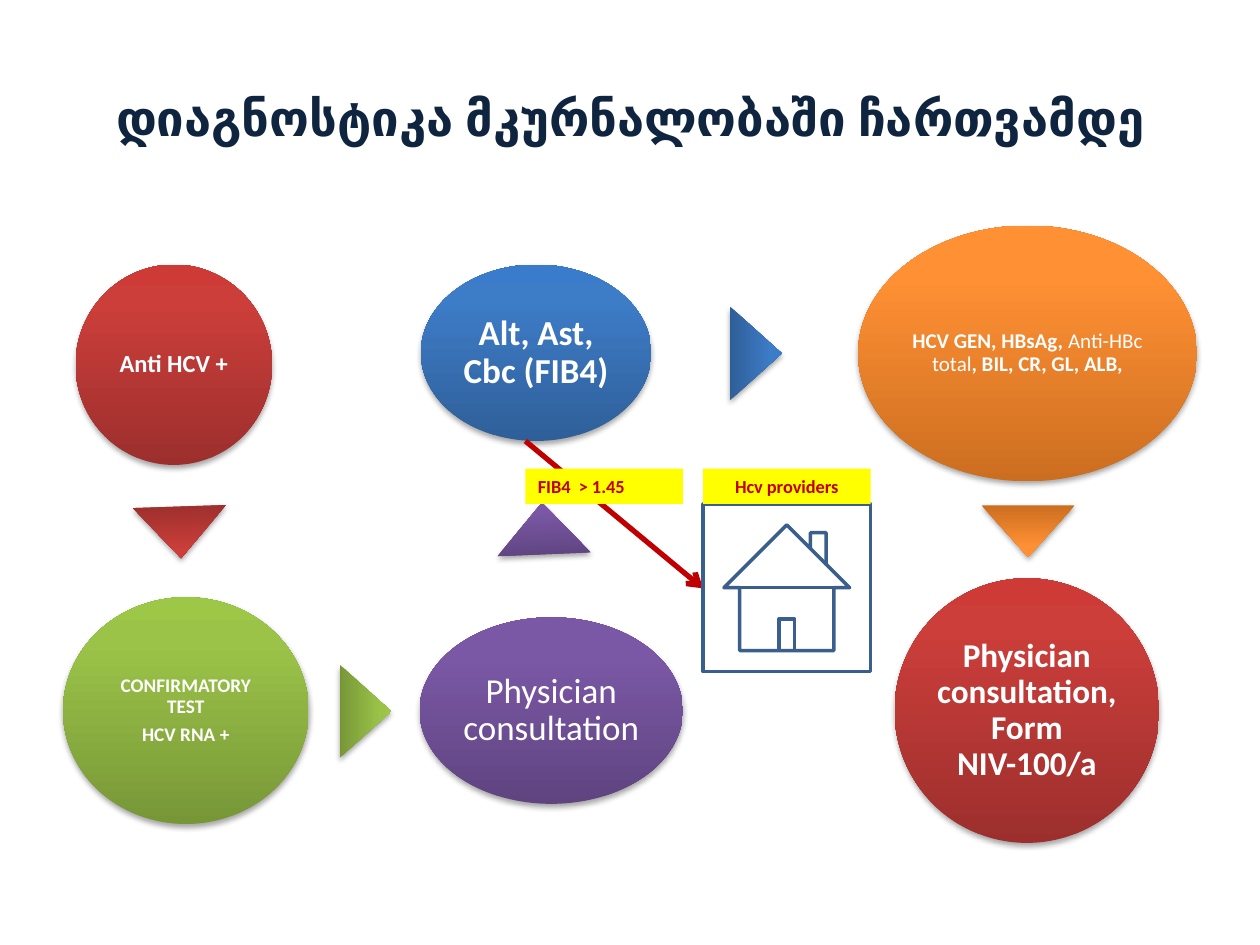
from lxml import etree
from pptx import Presentation
from pptx.dml.color import RGBColor
from pptx.enum.shapes import MSO_CONNECTOR, MSO_SHAPE as SHAPE
from pptx.enum.text import MSO_ANCHOR as ANCHOR, PP_ALIGN as ALIGN
from pptx.oxml import parse_xml
from pptx.oxml.ns import nsdecls, qn
from pptx.util import Inches, Pt

NAVY = RGBColor(0x0F, 0x24, 0x3E)
WHITE = RGBColor(0xFF, 0xFF, 0xFF)
YELLOW = RGBColor(0xFF, 0xFF, 0x00)
DARK_RED = RGBColor(0xC0, 0x00, 0x00)
STEEL = RGBColor(0x3A, 0x5F, 0x8C)


def shades(*codes):
    return [RGBColor.from_string(c) for c in codes]


RED = shades("9C2F2D", "CB3E3A", "CE3B37")
GREEN = shades("779737", "9BC348", "9DC746")
PURPLE = shades("5F4480", "7B58A6", "7C57A8")
BLUE = shades("2F5F99", "3D7CC7", "3A7CCB")
ORANGE = shades("CC6E20", "FF9034", "FF9136")

prs = Presentation()
prs.slide_width, prs.slide_height = Inches(10), Inches(7.5)
s = prs.slides.add_slide(prs.slide_layouts[5])

title = s.shapes.title
title.left, title.top = Inches(0.5), Inches(0.3)
title.width, title.height = Inches(9), Inches(1.25)
tf = title.text_frame
tf.vertical_anchor = ANCHOR.MIDDLE
p = tf.paragraphs[0]
p.alignment = ALIGN.CENTER
r = p.add_run()
r.text = "დიაგნოსტიკა მკურნალობაში ჩართვამდე"
r.font.name, r.font.size, r.font.bold = "Roboto", Pt(28), True
r.font.color.rgb = NAVY


def add_glossy(kind, box, colors):
    sp = s.shapes.add_shape(kind, *map(Inches, box))
    sp.line.fill.background()
    stops = "".join(
        f'<a:gs pos="{pos}"><a:srgbClr val="{c}"/></a:gs>'
        for pos, c in zip((0, 80000, 100000), colors))
    spPr = sp._element.spPr
    spPr.insert(2, parse_xml(
        f'<a:gradFill {nsdecls("a")} rotWithShape="1"><a:gsLst>{stops}</a:gsLst>'
        '<a:lin ang="16200000" scaled="0"/></a:gradFill>'))
    spPr.append(parse_xml(
        f'<a:effectLst {nsdecls("a")}>'
        '<a:outerShdw blurRad="40000" dist="23000" dir="5400000" rotWithShape="0">'
        '<a:srgbClr val="000000"><a:alpha val="35000"/></a:srgbClr>'
        '</a:outerShdw></a:effectLst>'))
    return sp


steps = [
    ((0.6, 2.1, 1.56, 1.59), RED, 14, 0.02, [[("Anti HCV +", True)]]),
    ((0.5, 4.74, 1.95, 1.8), GREEN, 11, 0.02,
     [[("CONFIRMATORY TEST", True)], [("HCV RNA +", True)]]),
    ((3.33, 4.9, 2.09, 1.48), PURPLE, 20, 0.03, [[("Physician consultation", False)]]),
    ((3.34, 2.1, 1.83, 1.4), BLUE, 20, 0.03, [[("Alt, Ast, Cbc (FIB4)", True)]]),
    ((6.81, 1.79, 2.69, 2.03), ORANGE, 12, 0.02,
     [[("HCV GEN, HBsAg, ", True), ("Anti-HBc total", False),
       (", BIL, CR, GL, ALB,", True)]]),
    ((7.1, 4.59, 2.1, 2.1), RED, 19, 0.03,
     [[("Physician consultation, Form NIV-100/a", True)]]),
]
for box, colors, size, inset, paragraphs in steps:
    sp = add_glossy(SHAPE.OVAL, box, colors)
    tf = sp.text_frame
    tf.word_wrap, tf.vertical_anchor = True, ANCHOR.MIDDLE
    tf.margin_left = tf.margin_right = Inches(inset)
    tf.margin_top = tf.margin_bottom = Inches(inset)
    for i, runs in enumerate(paragraphs):
        p = tf.add_paragraph() if i else tf.paragraphs[0]
        p.alignment, p.line_spacing = ALIGN.CENTER, 0.9
        p.space_after = Pt(round(0.35 * size))
        for text, bold in runs:
            r = p.add_run()
            r.text = text
            r.font.name, r.font.size, r.font.bold = "Calibri", Pt(size), bold
            r.font.color.rgb = WHITE

pointers = [
    (1.06, 4.02, 178.1, RED),
    (2.53, 5.44, 90, GREEN),
    (3.94, 3.99, 357.6, PURPLE),
    (5.63, 2.6, 90, BLUE),
    (7.79, 4.01, 180, ORANGE),
]
for left, top, angle, colors in pointers:
    sp = add_glossy(SHAPE.ISOSCELES_TRIANGLE, (left, top, 0.74, 0.41), colors)
    sp.rotation = angle

arrow = s.shapes.add_connector(
    MSO_CONNECTOR.STRAIGHT, Inches(4.17), Inches(3.5), Inches(5.58), Inches(4.67))
arrow.line.color.rgb, arrow.line.width = DARK_RED, Pt(3)
etree.SubElement(arrow.line._get_or_add_ln(), qn("a:tailEnd"), type="arrow")
etree.SubElement(arrow._element.spPr, qn("a:effectLst"))

house = s.shapes.add_shape(
    SHAPE.ACTION_BUTTON_HOME, Inches(5.58), Inches(4), Inches(1.33), Inches(1.33))
house.shadow.inherit = False
house.fill.background()
house.line.color.rgb, house.line.width = STEEL, Pt(2)

labels = [
    (4.17, 1.25, ALIGN.LEFT, "FIB4  > 1.45"),
    (5.58, 1.33, ALIGN.CENTER, "Hcv providers"),
]
for left, width, align, text in labels:
    sp = s.shapes.add_shape(
        SHAPE.RECTANGLE, Inches(left), Inches(3.72), Inches(width), Inches(0.28))
    sp.shadow.inherit = False
    sp.fill.solid()
    sp.fill.fore_color.rgb = YELLOW
    sp.line.fill.background()
    tf = sp.text_frame
    tf.word_wrap, tf.vertical_anchor = True, ANCHOR.TOP
    p = tf.paragraphs[0]
    p.alignment = align
    r = p.add_run()
    r.text = text
    r.font.name, r.font.size, r.font.bold = "Calibri", Pt(10.5), True
    r.font.color.rgb = DARK_RED

prs.save("out.pptx")
